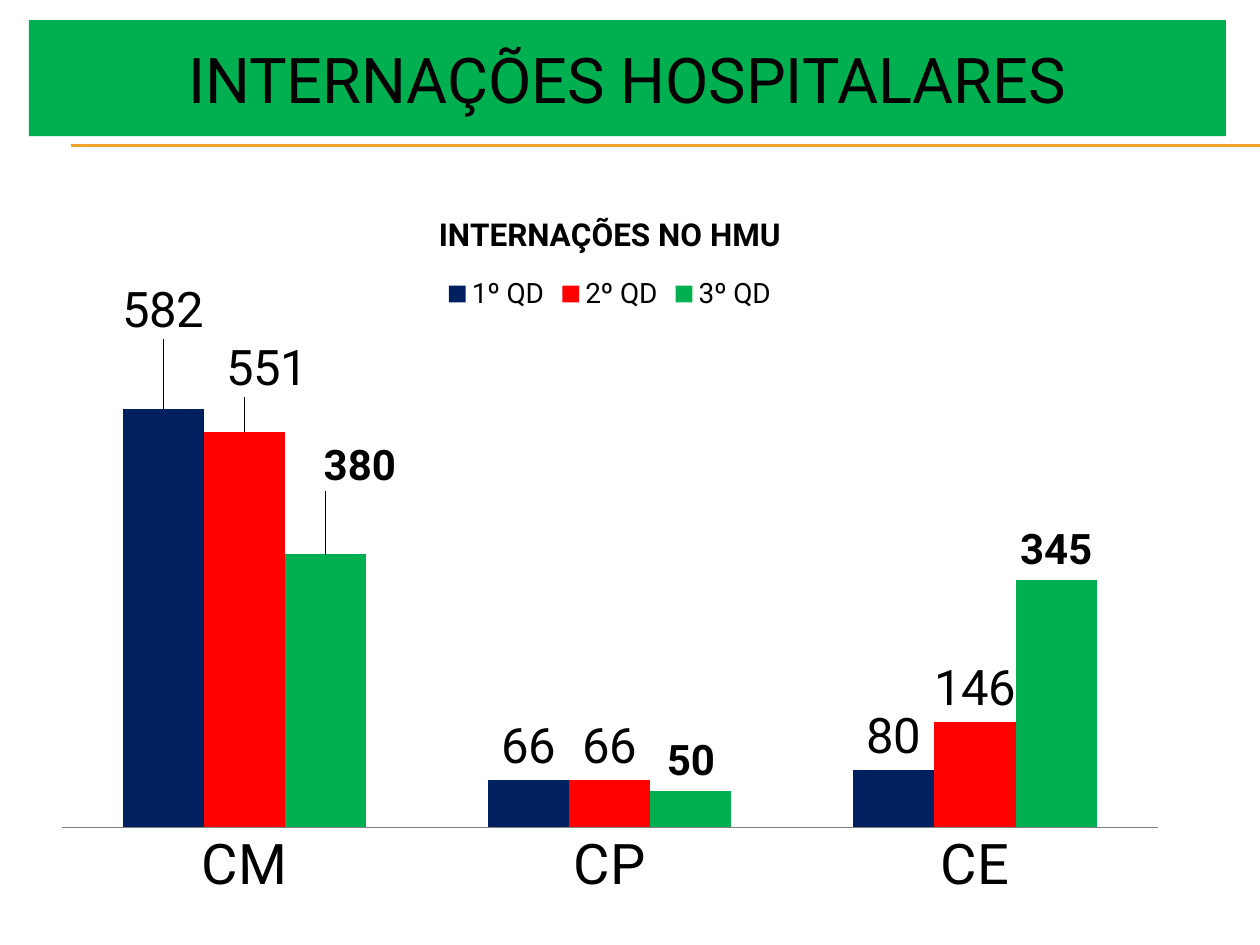
from lxml import etree
from pptx import Presentation
from pptx.chart import data as cd
from pptx.dml.color import RGBColor
from pptx.enum import chart as ce, shapes, text
from pptx.oxml import ns
from pptx.util import Inches, Pt

FONT = "Roboto"
COLORS = {"black": "000000", "gold": "F0A22E", "navy": "002060",
          "red": "FF0000", "green": "00B050", "gray": "808080"}


def style(font, size, bold=False):
    font.name, font.size, font.bold = FONT, Pt(size), bold
    font.color.rgb = RGBColor.from_string(COLORS["black"])


def place(parent, index, **spots):
    for old in parent.findall(ns.qn("c:layout")):
        parent.remove(old)
    layout = etree.Element(ns.qn("c:layout"))
    parent.insert(index, layout)
    manual = etree.SubElement(layout, ns.qn("c:manualLayout"))
    for tag, val in spots.items():
        etree.SubElement(manual, ns.qn("c:" + tag)).set("val", str(val))


prs = Presentation()
prs.slide_width, prs.slide_height = Inches(10), Inches(7.5)
slide = prs.slides.add_slide(prs.slide_layouts[5])

for y in (1.15, 1.16):
    rule = slide.shapes.add_connector(
        shapes.MSO_CONNECTOR.STRAIGHT, Inches(0.56), Inches(y), Inches(10), Inches(y))
    rule.line.color.rgb = RGBColor.from_string(COLORS["gold"])
    rule.line.width = Pt(0.75)
    etree.SubElement(rule._element.spPr, ns.qn("a:effectLst"))

title = slide.shapes.title
title.left, title.top = Inches(0.23), Inches(0.16)
title.width, title.height = Inches(9.5), Inches(0.92)
title.fill.solid()
title.fill.fore_color.rgb = RGBColor.from_string(COLORS["green"])
frame = title.text_frame
frame.text = "INTERNAÇÕES HOSPITALARES"
frame.vertical_anchor = text.MSO_ANCHOR.MIDDLE
frame.paragraphs[0].alignment = text.PP_ALIGN.CENTER
style(frame.paragraphs[0].runs[0].font, 36)

rows = [
    ("1º QD", (582, 66, 80), "navy", 28, False, (0, -0.09)),
    ("2º QD", (551, 66, 146), "red", 28, False, (0.02, -0.04)),
    ("3º QD", (380, 50, 345), "green", 24, True, (0.03, -0.08)),
]
data = cd.CategoryChartData()
data.categories = ["CM", "CP", "CE"]
for name, vals, *_ in rows:
    data.add_series(name, vals)
chart = slide.shapes.add_chart(
    ce.XL_CHART_TYPE.COLUMN_CLUSTERED, Inches(0.31), Inches(1.48),
    Inches(9.06), Inches(5.78), data).chart
style(chart.font, 10)

chart.has_title = True
head = chart.chart_title.text_frame
head.text = "INTERNAÇÕES NO HMU"
style(head.paragraphs[0].runs[0].font, 18, True)
chart.chart_title.include_in_layout = False

chart.has_legend = True
chart.legend.position = ce.XL_LEGEND_POSITION.TOP
chart.legend.include_in_layout = False
style(chart.legend.font, 16)

axis = chart.category_axis
axis.major_tick_mark = ce.XL_TICK_MARK.NONE
axis.format.line.color.rgb = RGBColor.from_string(COLORS["gray"])
axis.format.line.width = Pt(0.75)
style(axis.tick_labels.font, 32)
scale = chart.value_axis
scale.visible = False
scale.has_major_gridlines = False
scale.minimum_scale, scale.maximum_scale = 0, 700

plot = chart.plots[0]
plot.gap_width, plot.overlap = 150, 0
place(chart._chartSpace.chart.plotArea, 0, layoutTarget="inner", xMode="edge",
      yMode="edge", x=0.02, y=0.19, w=0.96, h=0.69)

for bars, (name, vals, color, size, bold, (dx, dy)) in zip(plot.series, rows):
    bars.format.fill.solid()
    bars.format.fill.fore_color.rgb = RGBColor.from_string(COLORS[color])
    labels = bars.data_labels
    labels.show_value = True
    labels.position = ce.XL_LABEL_POSITION.OUTSIDE_END
    style(labels.font, size, bold)
    first = bars.points[0].data_label
    first.position = ce.XL_LABEL_POSITION.OUTSIDE_END
    style(first.font, size, bold)
    place(labels._element.find(ns.qn("c:dLbl")), 1, x=dx, y=dy)

prs.save("out.pptx")
